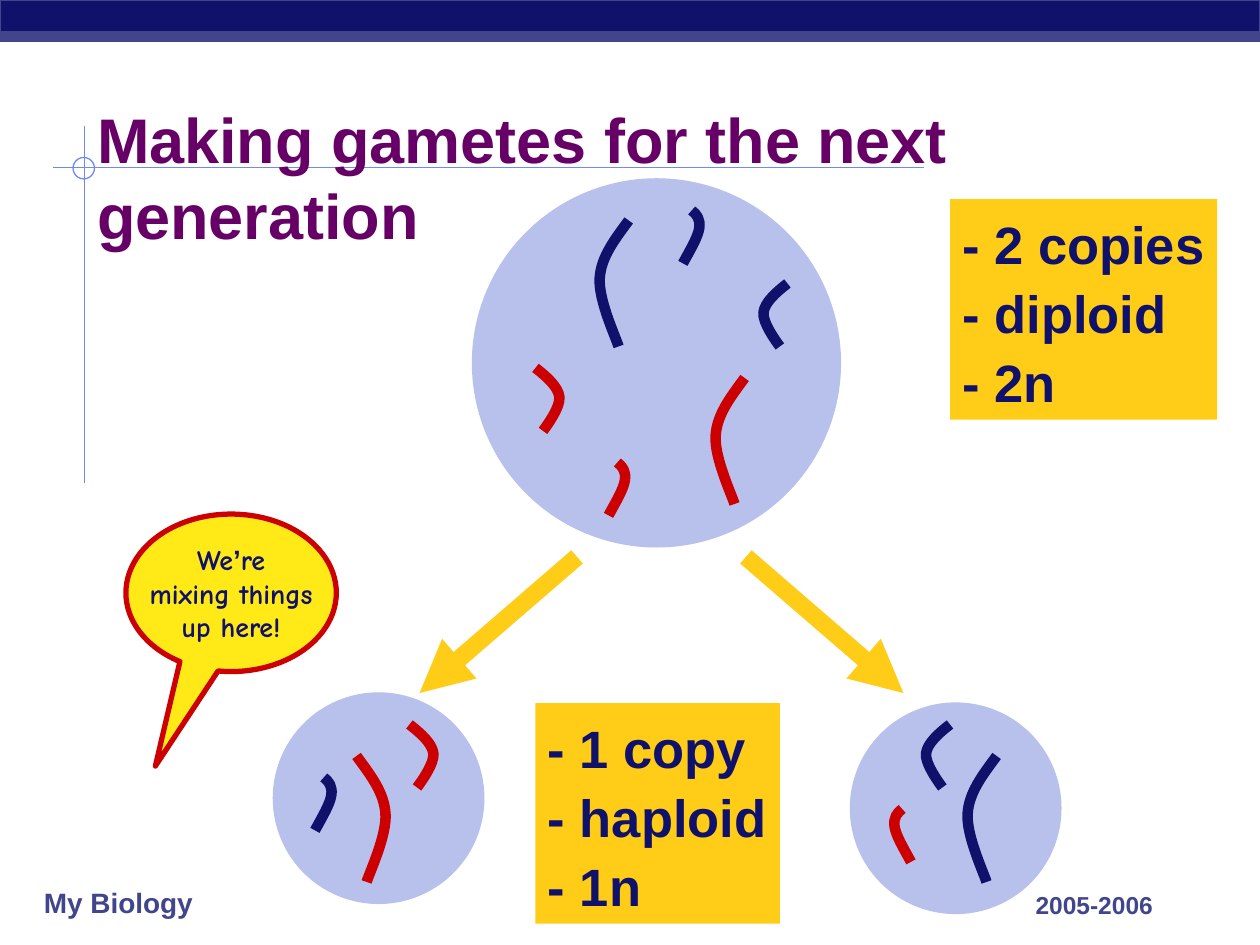
from dataclasses import dataclass

from lxml.etree import SubElement
from pptx import Presentation
from pptx.dml.color import RGBColor
from pptx.enum.shapes import MSO_CONNECTOR, MSO_SHAPE
from pptx.enum.text import MSO_ANCHOR, MSO_AUTO_SIZE, PP_ALIGN
from pptx.oxml.ns import qn
from pptx.util import Inches, Pt


@dataclass(frozen=True)
class Theme:
    """Colours, fonts and sizes of the slide."""
    navy: str = "0F116A"
    slate: str = "40458C"
    guide: str = "6F89F7"
    purple: str = "660066"
    gold: str = "FFCC18"
    yellow: str = "FFEA18"
    red: str = "CC0000"
    cell: str = "B7C1EB"
    font: str = "Arial"
    speech_font: str = "Comic Neue"
    title_size: int = 36
    label_size: int = 30
    small_size: int = 16
    date_size: int = 14
    thin: float = 0.75
    guide_width: int = 1
    outline: int = 3
    strand: int = 6
    arrow: int = 10


THEME = Theme()

CURVES = {
    "long": (0.24, [(0, 0), (0.11, 0.15), (0.22, 0.29), (0.23, 0.46),
                    (0.24, 0.63), (0.11, 0.91), (0.08, 1)]),
    "medium": (0.2, [(0, 0), (0.09, 0.07), (0.18, 0.15), (0.19, 0.23),
                     (0.2, 0.31), (0.09, 0.46), (0.06, 0.5)]),
    "short": (0.14, [(0.07, 0), (0.11, 0.03), (0.14, 0.07), (0.13, 0.14),
                     (0.12, 0.21), (0.06, 0.31), (0, 0.42)]),
}


def set_values(target, values):
    """Set each attribute named in the dict."""
    for name, value in values.items():
        setattr(target, name, value)


def paint_line(line, color, width):
    """Give a line its colour and width in points."""
    line.color.rgb = RGBColor.from_string(color)
    line.width = Pt(width)


def add_box(shapes, kind, box, fill=None, line=None, width=THEME.thin):
    """Add a flat preset shape in a box of inches."""
    shape = shapes.add_shape(kind, *map(Inches, box))
    shape.shadow.inherit = False
    if fill:
        shape.fill.solid()
        shape.fill.fore_color.rgb = RGBColor.from_string(fill)
    else:
        shape.fill.background()
    if line:
        paint_line(shape.line, line, width)
    else:
        shape.line.fill.background()
    return shape


def add_line(shapes, start, end, color, width, arrow=False):
    """Add a straight connector, with an arrowhead at its end if asked."""
    connector = shapes.add_connector(MSO_CONNECTOR.STRAIGHT, *map(Inches, start + end))
    paint_line(connector.line, color, width)
    properties = connector.element.spPr
    if arrow:
        SubElement(properties.find(qn("a:ln")), qn("a:tailEnd"), type="triangle")
    SubElement(properties, qn("a:effectLst"))


def write_text(frame, lines, size, color, frame_values, paragraph_values, font=THEME.font):
    """Write lines, each a string or a list of text and font pairs."""
    set_values(frame, {"word_wrap": True, "auto_size": MSO_AUTO_SIZE.NONE, **frame_values})
    for index, line in enumerate(lines):
        paragraph = frame.paragraphs[0] if index == 0 else frame.add_paragraph()
        set_values(paragraph, paragraph_values)
        for text, name in [(line, font)] if isinstance(line, str) else line:
            run = paragraph.add_run()
            run.text = text
            set_values(run.font, {"name": name, "size": Pt(size), "bold": True})
            run.font.color.rgb = RGBColor.from_string(color)


def add_chromosome(shapes, kind, left, top, color, mirrored=False):
    """Add one curved strand made of two Bezier segments."""
    width, curve = CURVES[kind]
    points = [(Inches(left + (width - x if mirrored else x)), Inches(top + y))
              for x, y in curve]
    builder = shapes.build_freeform(*points[0], scale=1.0)
    builder.add_line_segments(points[1:], close=False)
    shape = builder.convert_to_shape()
    shape.shadow.inherit = False
    shape.fill.background()
    paint_line(shape.line, color, THEME.strand)
    outline = next(shape.element.iter(qn("a:path")))
    segments = outline.findall(qn("a:lnTo"))
    for first in range(0, len(segments), 3):
        bezier = SubElement(outline, qn("a:cubicBezTo"))
        for segment in segments[first:first + 3]:
            bezier.append(segment[0])
            outline.remove(segment)


def add_cell(shapes, box, chromosomes):
    """Add a round cell with chromosomes placed relative to its box."""
    add_box(shapes, MSO_SHAPE.OVAL, box, THEME.cell, THEME.cell)
    for kind, x, y, color, mirrored in chromosomes:
        add_chromosome(shapes, kind, box[0] + x, box[1] + y, color, mirrored)


def add_label(shapes, box, lines):
    """Add a gold label with a list of facts."""
    label = add_box(shapes, MSO_SHAPE.RECTANGLE, box, THEME.gold)
    write_text(label.text_frame, lines, THEME.label_size, THEME.navy,
               {"word_wrap": False, "vertical_anchor": MSO_ANCHOR.MIDDLE},
               {"alignment": PP_ALIGN.LEFT, "line_spacing": 1.1})


def add_speech(shapes, box):
    """Add the speech bubble."""
    bubble = add_box(shapes, MSO_SHAPE.OVAL_CALLOUT, box, THEME.yellow, THEME.red, THEME.outline)
    bubble.adjustments[0], bubble.adjustments[1] = -0.36, 1.1
    margins = {f"margin_{side}": Inches(0.01) for side in ("left", "top", "right", "bottom")}
    first = [("We", THEME.speech_font), ("’", THEME.font), ("re", THEME.speech_font)]
    write_text(bubble.text_frame, [first, "mixing things", "up here!"],
               THEME.small_size, THEME.navy,
               {"word_wrap": False, "vertical_anchor": MSO_ANCHOR.MIDDLE, **margins},
               {"alignment": PP_ALIGN.CENTER}, THEME.speech_font)


def add_frame(shapes, box):
    """Add the top bands, guide lines and footer texts."""
    left, top, width, height = box
    add_line(shapes, (left + 0.42, top + 1.33), (left + 7.33, top + 1.33),
             THEME.guide, THEME.guide_width)
    add_line(shapes, (left + 0.67, top + 1), (left + 0.67, top + 3.83),
             THEME.guide, THEME.guide_width)
    add_box(shapes, MSO_SHAPE.OVAL, (left + 0.58, top + 1.25, 0.17, 0.17), line=THEME.guide)
    for offset, depth, color in ((0, 0.33, THEME.navy), (0.25, 0.08, THEME.slate)):
        add_box(shapes, MSO_SHAPE.RECTANGLE, (left, top + offset, width, depth),
                color, THEME.slate)
    bottom = top + height
    footers = [
        ("My Biology", (left + 0.25, bottom - 0.52, 1.58, 0.37), THEME.small_size,
         MSO_ANCHOR.MIDDLE, PP_ALIGN.LEFT),
        ("2005-2006", (left + 7.58, bottom - 0.65, 1.67, 0.5), THEME.date_size,
         MSO_ANCHOR.BOTTOM, PP_ALIGN.RIGHT),
    ]
    for text, place, size, anchor, alignment in footers:
        textbox = shapes.add_textbox(*map(Inches, place))
        write_text(textbox.text_frame, [text], size, THEME.slate,
                   {"vertical_anchor": anchor}, {"alignment": alignment})


def add_title(shapes, box):
    """Place and fill the title placeholder in front of the frame."""
    title = shapes.title
    set_values(title, dict(zip(("left", "top", "width", "height"), map(Inches, box))))
    write_text(title.text_frame, ["Making gametes for the next generation"],
               THEME.title_size, THEME.purple, {"vertical_anchor": MSO_ANCHOR.TOP},
               {"alignment": PP_ALIGN.LEFT, "line_spacing": 1.0})
    title.element.getparent().append(title.element)


def main():
    """Build and save the slide."""
    presentation = Presentation()
    set_values(presentation, {"slide_width": Inches(10), "slide_height": Inches(7.5)})
    shapes = presentation.slides.add_slide(presentation.slide_layouts[5]).shapes
    navy, red = THEME.navy, THEME.red
    add_frame(shapes, (0, 0, 10, 7.5))
    add_title(shapes, (0.67, 0.75, 8.5, 0.83))
    for start, end in ((4.58, 3.33), (5.92, 7.17)):
        add_line(shapes, (start, 4.42), (end, 5.5), THEME.gold, THEME.arrow, arrow=True)
    add_label(shapes, (7.54, 1.58, 2.12, 1.75), ["- 2 copies", "- diploid", "- 2n"])
    add_label(shapes, (4.25, 5.58, 1.94, 1.75), ["- 1 copy", "- haploid", "- 1n"])
    add_cell(shapes, (2.17, 5.5, 1.67, 1.67), [
        ("short", 0.33, 0.67, navy, False),
        ("long", 0.66, 0.5, red, False),
        ("medium", 1.08, 0.25, red, False),
    ])
    add_cell(shapes, (6.75, 5.58, 1.67, 1.67), [
        ("long", 0.92, 0.42, navy, True),
        ("short", 0.34, 0.84, red, True),
        ("medium", 0.59, 0.17, navy, True),
    ])
    add_cell(shapes.add_group_shape().shapes, (3.75, 1.42, 2.92, 2.92), [
        ("long", 1, 0.33, navy, True),
        ("long", 1.92, 1.58, red, True),
        ("medium", 2.3, 0.83, navy, True),
        ("short", 1.67, 0.25, navy, False),
        ("short", 1.08, 2.25, red, False),
        ("medium", 0.5, 1.5, red, False),
    ])
    add_speech(shapes, (1, 4.08, 1.67, 1.25))
    presentation.save("out.pptx")


if __name__ == "__main__":
    main()
